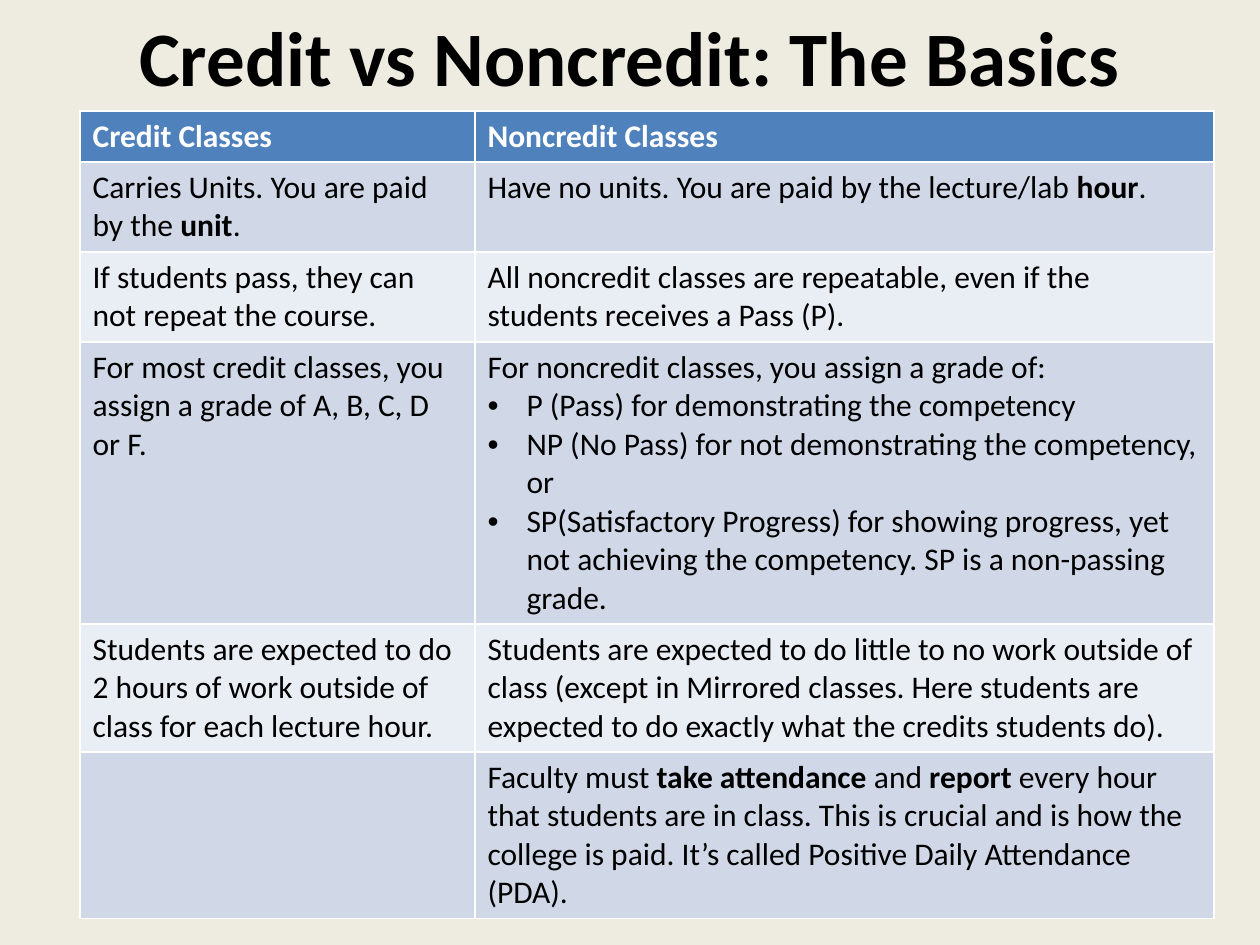
"""Build the slide that compares credit and noncredit classes."""
from lxml import etree
from pptx import Presentation
from pptx import util as u
from pptx.dml.color import RGBColor
from pptx.enum import text
from pptx.oxml.ns import qn

TITLE = "Credit vs Noncredit: The Basics"
HEADS = ("Credit Classes", "Noncredit Classes")
ROWS = [
    ("Carries Units. You are paid by the *unit*.",
     "Have no units. You are paid by the lecture/lab *hour*."),
    ("If students pass, they can not repeat the course.",
     "All noncredit classes are repeatable, even if the students receives a Pass (P)."),
    ("For most credit classes, you assign a grade of A, B, C, D or F.",
     "For noncredit classes, you assign a grade of:\n"
     "• P (Pass) for demonstrating the competency\n"
     "• NP (No Pass) for not demonstrating the competency, or\n"
     "• SP(Satisfactory Progress) for showing progress, yet not achieving "
     "the competency. SP is a non-passing grade."),
    ("Students are expected to do 2 hours of work outside of class for each lecture hour.",
     "Students are expected to do little to no work outside of class (except in Mirrored "
     "classes. Here students are expected to do exactly what the credits students do)."),
    ("",
     "Faculty must *take attendance *and *report* every hour that students are in class. "
     "This is crucial and is how the college is paid. It’s called Positive Daily "
     "Attendance (PDA)."),
]
WIDTHS = (395, 739)
HEIGHTS = (51, 90, 90, 282, 128, 166)

FONT = "Calibri"
SAND = RGBColor(0xEE, 0xEC, 0xE1)
BLUE = RGBColor(0x4F, 0x81, 0xBD)
BANDS = (RGBColor(0xD0, 0xD8, 0xE8), RGBColor(0xE9, 0xED, 0xF4))
BLACK = RGBColor(0, 0, 0)
WHITE = RGBColor(0xFF, 0xFF, 0xFF)


def px(n):
    return u.Emu(round(n * 914400 / 126))


def style(font, size, color, bold):
    font.name, font.size, font.bold = FONT, u.Pt(size), bold
    font.color.rgb = color


def bullet(para):
    props = para._p.get_or_add_pPr()
    props.set("marL", str(px(39)))
    props.set("indent", str(-px(39)))
    etree.SubElement(props, qn("a:buFont")).set("typeface", "Arial")
    etree.SubElement(props, qn("a:buChar")).set("char", "•")


def write(cell, words, fill, color, head):
    cell.fill.solid()
    cell.fill.fore_color.rgb = fill
    frame = cell.text_frame
    for i, line in enumerate(words.split("\n")):
        para = frame.add_paragraph() if i else frame.paragraphs[0]
        if line.startswith("• "):
            bullet(para)
        for j, part in enumerate(line.removeprefix("• ").split("*")):
            if part:
                run = para.add_run()
                run.text = part
                style(run.font, 18, color, head or j % 2 == 1)


def main():
    deck = Presentation()
    deck.slide_width, deck.slide_height = px(1260), px(945)
    slide = deck.slides.add_slide(deck.slide_layouts[5])
    slide.background.fill.solid()
    slide.background.fill.fore_color.rgb = SAND

    title = slide.shapes.title
    title.left, title.top, title.width, title.height = map(px, (63, 0, 1134, 111))
    frame = title.text_frame
    frame.text = TITLE
    frame.vertical_anchor = text.MSO_ANCHOR.MIDDLE
    para = frame.paragraphs[0]
    para.alignment = text.PP_ALIGN.CENTER
    style(para.runs[0].font, 44, BLACK, True)

    grid = slide.shapes.add_table(
        len(HEIGHTS), len(WIDTHS), px(80), px(111), px(sum(WIDTHS)), px(sum(HEIGHTS))).table
    for col, width in zip(grid.columns, WIDTHS):
        col.width = px(width)
    for row, height in zip(grid.rows, HEIGHTS):
        row.height = px(height)
    for r, row in enumerate([HEADS] + ROWS):
        head = r == 0
        fill = BLUE if head else BANDS[(r - 1) % 2]
        for c, words in enumerate(row):
            write(grid.cell(r, c), words, fill, WHITE if head else BLACK, head)

    deck.save("out.pptx")


if __name__ == "__main__":
    main()
